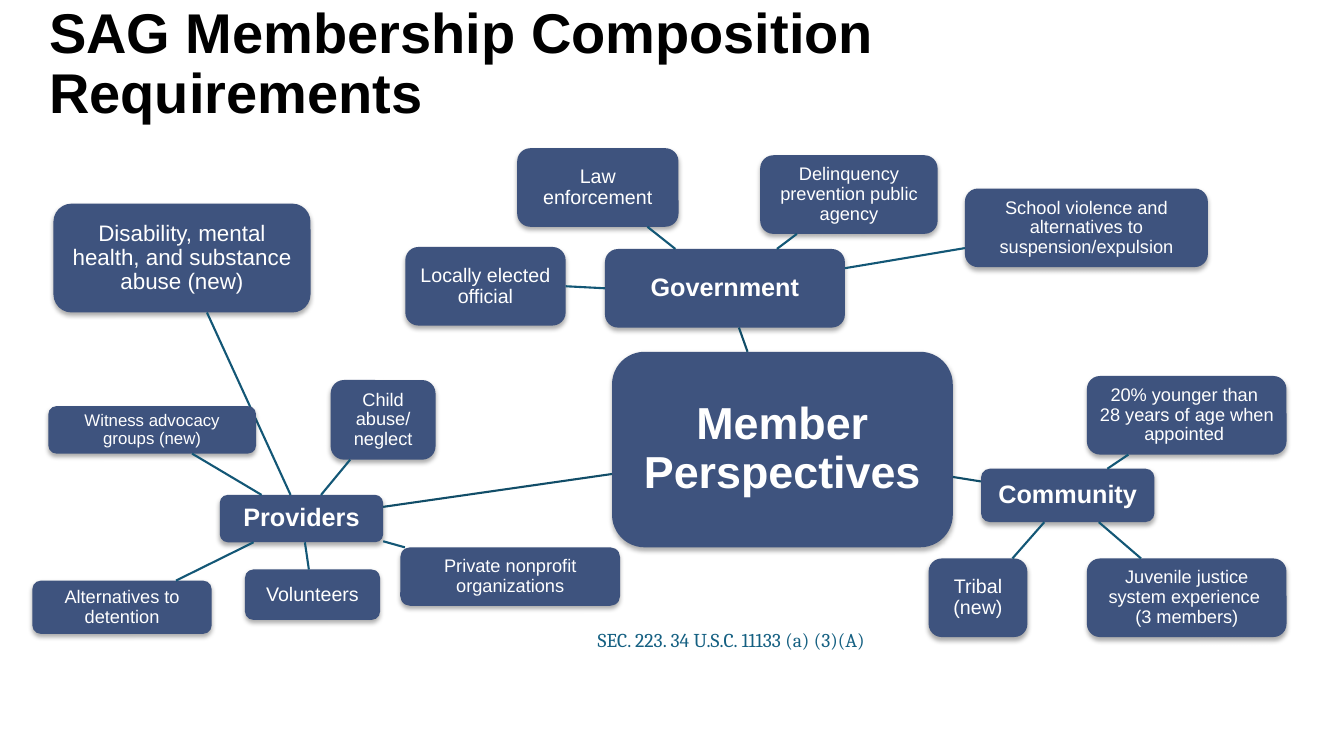
import pptx
import pptx.util
import pptx.dml.color
import pptx.enum.shapes
import pptx.enum.text
import pptx.oxml
import pptx.oxml.ns
from lxml import etree

COLORS = {
    "title": "000000",
    "node": "3E537E",
    "node_text": "FFFFFF",
    "main_link": "114D68",
    "link": "135776",
    "citation": "156082",
}
CELL = pptx.util.Inches(0.1)
SIDE_TOLERANCE = CELL * 0.2
SHADOW = (
    '<a:effectLst xmlns:a="http://schemas.openxmlformats.org/drawingml/2006/main">'
    '<a:outerShdw blurRad="44450" dist="27940" dir="5400000" algn="ctr" rotWithShape="0">'
    '<a:srgbClr val="000000"><a:alpha val="32000"/></a:srgbClr>'
    "</a:outerShdw></a:effectLst>"
)

GOVERNMENT = {
    "corner": (40.2, 14.7),
    "hub": ("Government", 19.8, 10, 23.8, 7.8),
    "members": [
        ("Locally elected official", 0, 9.8, 15.9, 7.8, 14),
        ("Law enforcement", 11.1, 0, 16, 7.8, 14),
        ("Delinquency prevention public agency", 35.2, 0.7, 17.6, 7.8, 13),
        ("School violence and alternatives to suspension/expulsion", 55.5, 4, 24.1, 7.8, 13),
    ],
}
COMMUNITY = {
    "corner": (92.1, 37.3),
    "hub": ("Community", 5.2, 9.2, 17.2, 5.3),
    "members": [
        ("20% younger than \v28 years of age when appointed ", 15.7, 0, 19.8, 7.8, 13),
        ("Juvenile justice system experience \v(3 members)", 15.7, 18.1, 19.8, 7.8, 13),
        ("Tribal (new)", 0, 18.1, 9.8, 7.8, 14),
    ],
}
PROVIDERS = {
    "corner": (3.2, 20.2),
    "hub": ("Providers", 18.6, 28.9, 16.2, 4.7),
    "members": [
        ("Private nonprofit organizations", 36.5, 34.1, 21.8, 5.8, 13),
        ("Volunteers", 21.1, 36.3, 13.4, 5, 14),
        ("Alternatives to detention", 0, 37.4, 17.8, 5.3, 13),
        ("Disability, mental health, and substance abuse (new)", 2.1, 0, 25.5, 10.8, 16),
        ("Child abuse/ neglect", 29.6, 17.5, 10.4, 7.9, 13),
        ("Witness advocacy groups (new)", 1.6, 20.1, 20.6, 4.7, 12, 1),
    ],
}


def rgb(name):
    return pptx.dml.color.RGBColor.from_string(COLORS[name])


def cells(*counts):
    return [round(count * CELL) for count in counts]


def write_text(frame, text, size, color, font="Arial", bold=False):
    frame.text = text
    paragraph = frame.paragraphs[0]
    for run in paragraph.runs:
        run.font.name = font
        run.font.size = pptx.util.Pt(size)
        run.font.bold = bold
        run.font.color.rgb = rgb(color)
    return paragraph


def add_node(slide, text, left, top, width, height, size, inset=0.4, bold=False):
    node = slide.shapes.add_shape(
        pptx.enum.shapes.MSO_SHAPE.ROUNDED_RECTANGLE, *cells(left, top, width, height)
    )
    node.fill.solid()
    node.fill.fore_color.rgb = rgb("node")
    node.line.fill.background()
    node._element.spPr.append(pptx.oxml.parse_xml(SHADOW))
    frame = node.text_frame
    frame.word_wrap = True
    frame.vertical_anchor = pptx.enum.text.MSO_ANCHOR.MIDDLE
    frame.margin_left = frame.margin_right = round(inset * CELL)
    frame.margin_top = frame.margin_bottom = round(inset * CELL)
    paragraph = write_text(frame, text, size, "node_text", bold=bold)
    paragraph.alignment = pptx.enum.text.PP_ALIGN.CENTER
    paragraph.line_spacing = 0.9
    return node


def center(node):
    return node.left + node.width / 2, node.top + node.height / 2


def edge_point(node, other):
    x, y = center(node)
    other_x, other_y = center(other)
    dx, dy = other_x - x, other_y - y
    reach = max(abs(dx) / (node.width / 2), abs(dy) / (node.height / 2))
    return round(x + dx / reach), round(y + dy / reach)


def middle_side(node, point):
    x, y = center(node)
    sides = [
        (x, node.top),
        (node.left, y),
        (x, node.top + node.height),
        (node.left + node.width, y),
    ]
    for index, side in enumerate(sides):
        if max(abs(side[0] - point[0]), abs(side[1] - point[1])) < SIDE_TOLERANCE:
            return index
    return None


def add_link(slide, start, end, color):
    start_point, end_point = edge_point(start, end), edge_point(end, start)
    link = slide.shapes.add_connector(
        pptx.enum.shapes.MSO_CONNECTOR.STRAIGHT, *start_point, *end_point
    )
    link.line.color.rgb = rgb(color)
    link.line.width = pptx.util.Pt(1.5)
    etree.SubElement(link._element.spPr, pptx.oxml.ns.qn("a:effectLst"))
    start_side, end_side = middle_side(start, start_point), middle_side(end, end_point)
    if start_side is not None:
        link.begin_connect(start, start_side)
    if end_side is not None:
        link.end_connect(end, end_side)


def draw_cluster(slide, core, cluster):
    corner_left, corner_top = cluster["corner"]
    label, left, top, width, height = cluster["hub"]
    hub = add_node(
        slide, label, corner_left + left, corner_top + top, width, height, 18, 0.5, True
    )
    add_link(slide, core, hub, "main_link")
    for text, left, top, *format_values in cluster["members"]:
        member = add_node(slide, text, corner_left + left, corner_top + top, *format_values)
        add_link(slide, hub, member, "link")


def draw_title(slide, box):
    frame = slide.shapes.add_textbox(*cells(*box)).text_frame
    frame.word_wrap = True
    frame.vertical_anchor = pptx.enum.text.MSO_ANCHOR.MIDDLE
    title = write_text(
        frame, "SAG Membership Composition Requirements", 40, "title", bold=True
    )
    title.line_spacing = 0.9


def draw_citation(slide, box):
    frame = slide.shapes.add_textbox(*cells(*box)).text_frame
    frame.word_wrap = False
    write_text(frame, "SEC. 223. 34 U.S.C. 11133 (a) (3)(A)", 14, "citation", "Cambria")


def main():
    deck = pptx.Presentation()
    deck.slide_width = pptx.util.Inches(13.33)
    deck.slide_height = pptx.util.Inches(7.5)
    slide = deck.slides.add_slide(deck.slide_layouts[6])
    draw_title(slide, (3.9, 2.4, 120.2, 8.2))
    core = add_node(slide, "Member Perspectives", 60.7, 34.9, 33.8, 19.4, 32, 0.9, True)
    for cluster in (GOVERNMENT, COMMUNITY, PROVIDERS):
        draw_cluster(slide, core, cluster)
    draw_citation(slide, (58.3, 61.8, 31.9, 3.4))
    deck.save("out.pptx")


if __name__ == "__main__":
    main()
